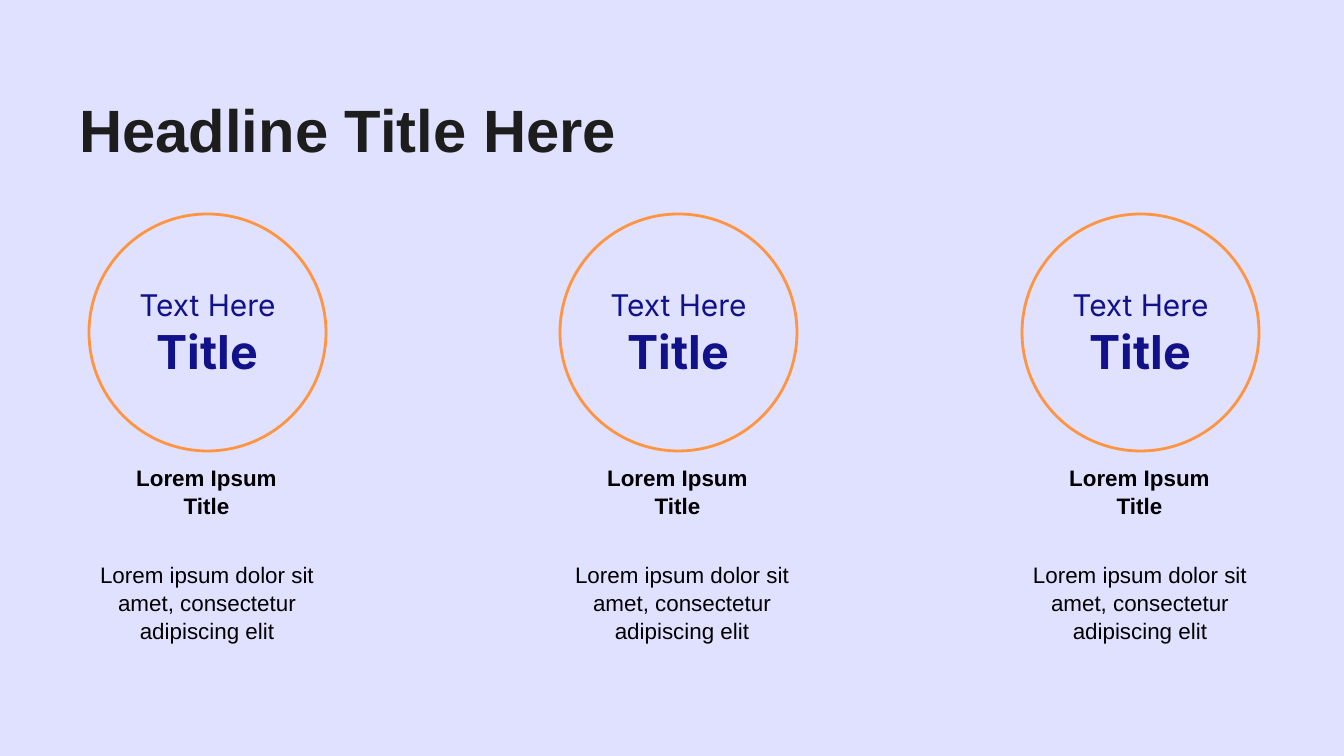
from pptx import Presentation
from pptx.dml.color import RGBColor
from pptx.enum.shapes import MSO_SHAPE as SHAPE
from pptx.enum.text import MSO_ANCHOR as ANCHOR, MSO_AUTO_SIZE as FIT, PP_ALIGN as ALIGN
from pptx.util import Inches, Pt

LAVENDER = RGBColor(0xE0, 0xE0, 0xFF)
ORANGE = RGBColor(0xFF, 0x95, 0x40)
NAVY = RGBColor(0x11, 0x11, 0x89)
INK = RGBColor(0x1D, 0x1D, 0x1D)
BLACK = RGBColor(0, 0, 0)

SCALE = Inches(10) / 1344  # EMU in one px


def px(*lengths):
    return [round(n * SCALE) for n in lengths]


class Deck:
    """Holds the shared style and the current slide."""

    font = "Arial"
    accent_font = "Inter"

    def __init__(self, slide):
        self.slide = slide

    def background(self, color):
        fill = self.slide.background.fill
        fill.solid()
        fill.fore_color.rgb = color

    def frame(self, sp, anchor, align, spacing):
        tf = sp.text_frame
        tf.word_wrap = True
        tf.auto_size = FIT.NONE
        tf.vertical_anchor = anchor
        tf.margin_left = tf.margin_right = Inches(0.1)
        tf.margin_top = tf.margin_bottom = Inches(0.1)
        p = tf.paragraphs[0]
        p.alignment = align
        p.line_spacing = spacing
        return p

    def run(self, p, text, size, color, bold=False, font=None):
        r = p.add_run()
        r.text = text
        r.font.name = font or self.font
        r.font.size = Pt(size)
        r.font.bold = bold
        r.font.color.rgb = color

    def title(self, box, text):
        sp = self.slide.shapes.title
        sp.left, sp.top, sp.width, sp.height = px(*box)
        p = self.frame(sp, ANCHOR.TOP, ALIGN.LEFT, 0.9)
        self.run(p, text, 32, INK, bold=True)

    def text(self, box, text, bold=False):
        sp = self.slide.shapes.add_textbox(*px(*box))
        p = self.frame(sp, ANCHOR.TOP, ALIGN.CENTER, 1.05)
        self.run(p, text, 12, BLACK, bold)

    def circle(self, box, label, heading):
        sp = self.slide.shapes.add_shape(SHAPE.ROUNDED_RECTANGLE, *px(*box))
        sp.adjustments[0] = 0.5
        sp.shadow.inherit = False
        sp.fill.background()
        sp.line.color.rgb = ORANGE
        sp.line.width = Pt(1.5)
        p = self.frame(sp, ANCHOR.MIDDLE, ALIGN.CENTER, 1.0)
        self.run(p, label, 16, NAVY, font=self.accent_font)
        p.add_line_break()
        self.run(p, heading, 25, NAVY, bold=True, font=self.accent_font)


def main():
    prs = Presentation()
    prs.slide_width, prs.slide_height = px(1344, 756)
    deck = Deck(prs.slides.add_slide(prs.slide_layouts[5]))
    deck.background(LAVENDER)

    # Headline
    deck.title((66, 87, 995, 122), "Headline Title Here")

    # Columns: circle, caption and description
    for circle_x, body_x in ((89, 82), (560, 557), (1022, 1015)):
        deck.text((circle_x + 10, 449, 215, 98), "Lorem Ipsum Title", bold=True)
        deck.text((body_x, 546, 250, 129),
                  "Lorem ipsum dolor sit amet, consectetur adipiscing elit")
        deck.circle((circle_x, 214, 237, 237), "Text Here", "Title")

    prs.save("out.pptx")


if __name__ == "__main__":
    main()
